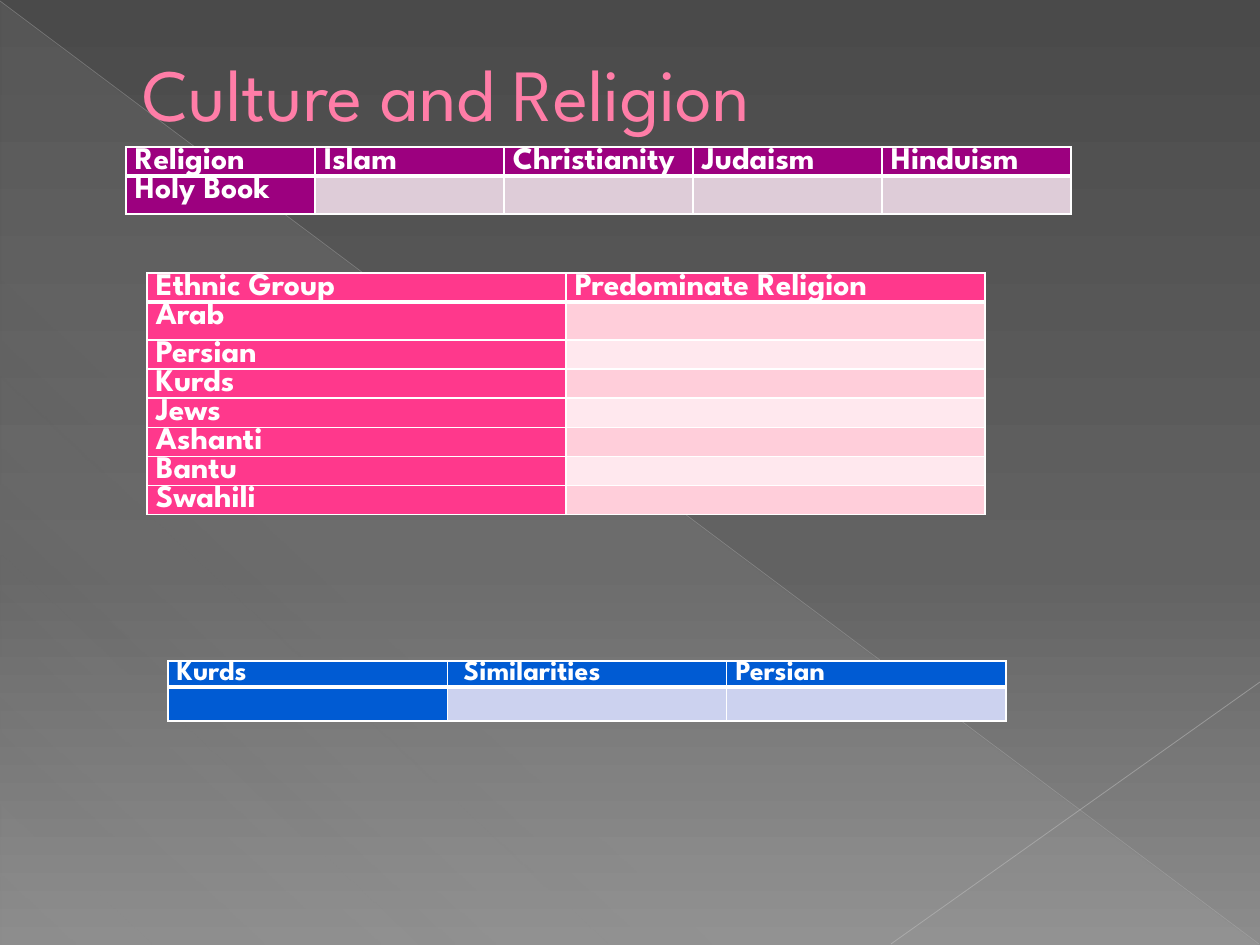
from lxml.etree import SubElement
from pptx import Presentation
from pptx.dml.color import RGBColor
from pptx.enum.shapes import MSO_CONNECTOR as Connector, MSO_SHAPE as Preset
from pptx.enum.text import MSO_ANCHOR as Anchor
from pptx.oxml.ns import qn
from pptx.util import Pt

PX = 914400 // 126
PX_SCALE = 914400 / 126
FONT = "League Spartan"
COLORS = {
    "white": "FFFFFF", "title": "FF7DA7", "glow": "D2D2D2",
    "diagonal": "BFBFBF", "corner": "C6C6C6",
    "top": "4A4A4A", "middle": "626262", "bottom": "8C8C8C",
    "purple": "9C007F", "mauve": "DECCD8",
    "pink": "FF388C", "rose": "FFCEDA", "blush": "FFE8EE",
    "blue": "005BD3", "lavender": "CCD2EF",
}
TABLES = [
    {"box": (126, 147, 945), "heights": [29, 38], "size": 18,
     "accent": "purple", "bands": ["mauve"],
     "rows": [["Religion", "Islam", "Christianity", "Judaism", "Hinduism"],
              ["Holy Book", "", "", "", ""]]},
    {"box": (147, 273, 838), "heights": [29, 38] + [29] * 6, "size": 18,
     "accent": "pink", "bands": ["rose", "blush"],
     "rows": [["Ethnic Group", "Predominate Religion"]]
     + [[group, ""] for group in
        ("Arab", "Persian", "Kurds", "Jews", "Ashanti", "Bantu", "Swahili")]},
    {"box": (168, 661, 838), "heights": [26, 34], "size": 16,
     "accent": "blue", "bands": ["lavender"],
     "rows": [["Kurds", " Similarities", "Persian"], ["", "", ""]]},
]


def px(length):
    return round(length * PX_SCALE)


def rgb(name):
    return RGBColor.from_string(COLORS[name])


def apply(target, values):
    for name, value in values.items():
        setattr(target, name, value)


def add_alpha(solid_fill, percent):
    SubElement(solid_fill[0], qn("a:alpha"), val=str(percent * 1000))


def set_gradient(fill, parent, stops, angle):
    fill.solid()
    solid = parent.find(qn("a:solidFill"))
    gradient = SubElement(parent, qn("a:gradFill"), rotWithShape="1")
    stop_list = SubElement(gradient, qn("a:gsLst"))
    for position, color, opacity in stops:
        stop = SubElement(stop_list, qn("a:gs"), pos=str(position * 1000))
        SubElement(stop, qn("a:srgbClr"), val=COLORS[color])
        if opacity < 100:
            add_alpha(stop, opacity)
    SubElement(gradient, qn("a:lin"), ang=str(angle * 60000), scaled="0")
    parent.replace(solid, gradient)


def add_line(slide, start, end, color, width, opacity):
    line = slide.shapes.add_connector(Connector.STRAIGHT, *map(px, start + end))
    line.line.color.rgb = rgb(color)
    line.line.width = Pt(width)
    properties = line._element.spPr
    add_alpha(properties.find(qn("a:ln")).find(qn("a:solidFill")), opacity)
    SubElement(properties, qn("a:effectLst"))


def draw_backdrop(slide, width, height):
    background = slide.background
    background.fill.solid()
    set_gradient(background.fill, slide._element.cSld.find(qn("p:bg"))[0],
                 [(0, "top", 100), (60, "middle", 100), (100, "bottom", 100)], 90)
    triangle = slide.shapes.add_shape(
        Preset.RIGHT_TRIANGLE, px(1), px(2), px(width - 2), px(height - 2))
    triangle.shadow.inherit = False
    triangle.line.fill.background()
    properties = triangle._element.spPr
    geometry = properties.find(qn("a:prstGeom"))
    set_gradient(triangle.fill, properties,
                 [(0, "glow", 10), (70, "glow", 8), (100, "glow", 1)], 133)
    geometry.addnext(properties.find(qn("a:gradFill")))
    add_line(slide, (0, 1), (width - 1, height - 1), "diagonal", 0.39, 35)
    add_line(slide, (width, 682), (891, height - 1), "corner", 0.47, 45)


def draw_title(slide, left, top, width, height):
    title = slide.shapes.title
    slide.shapes._spTree.append(title._element)
    apply(title, {"left": px(left), "top": px(top),
                  "width": px(width), "height": px(height)})
    title.text_frame.text = "Culture and Religion"
    title.text_frame.vertical_anchor = Anchor.MIDDLE
    paragraph = title.text_frame.paragraphs[0]
    properties = paragraph._p.get_or_add_pPr()
    for name, value in {"marL": px(67), "indent": 0, "algn": "l"}.items():
        properties.set(name, str(value))
    font = paragraph.runs[0].font
    apply(font, {"name": FONT, "size": Pt(42)})
    font.color.rgb = rgb("title")


def set_borders(cell, widths):
    properties = cell._tc.get_or_add_tcPr()
    for side, width in widths.items():
        line = SubElement(properties, qn(f"a:ln{side}"), w=str(Pt(width)))
        fill = SubElement(line, qn("a:solidFill"))
        SubElement(fill, qn("a:srgbClr"), val=COLORS["white"])


def format_cell(cell, text, size, color, borders):
    set_borders(cell, borders)
    cell.fill.solid()
    cell.fill.fore_color.rgb = rgb(color)
    apply(cell, {"margin_left": px(9), "margin_right": px(9),
                 "margin_top": 0, "margin_bottom": 0})
    paragraph = cell.text_frame.paragraphs[0]
    if not text:
        SubElement(paragraph._p, qn("a:endParaRPr"), sz="1000")
        return
    run = paragraph.add_run()
    run.text = text
    apply(run.font, {"name": FONT, "size": Pt(size), "bold": True})
    run.font.color.rgb = rgb("white")


def draw_table(slide, box, heights, size, accent, bands, rows):
    left, top, width = box
    columns = len(rows[0])
    table = slide.shapes.add_table(
        len(rows), columns, px(left), px(top), px(width), px(sum(heights))).table
    for column in table.columns:
        column.width = px(width / columns)
    for r, (height, texts) in enumerate(zip(heights, rows)):
        table.rows[r].height = px(height)
        borders = {"L": 1, "R": 1, "T": 3 if r == 1 else 1, "B": 3 if r == 0 else 1}
        for c, text in enumerate(texts):
            color = accent if r == 0 or c == 0 else bands[(r - 1) % len(bands)]
            format_cell(table.cell(r, c), text, size, color, borders)


def main():
    presentation = Presentation()
    apply(presentation, {"slide_width": px(1260), "slide_height": px(945)})
    slide = presentation.slides.add_slide(presentation.slide_layouts[5])
    draw_backdrop(slide, 1260, 945)
    draw_title(slide, 63, 37, 1134, 110)
    for table in TABLES:
        draw_table(slide, **table)
    presentation.save("out.pptx")


if __name__ == "__main__":
    main()
